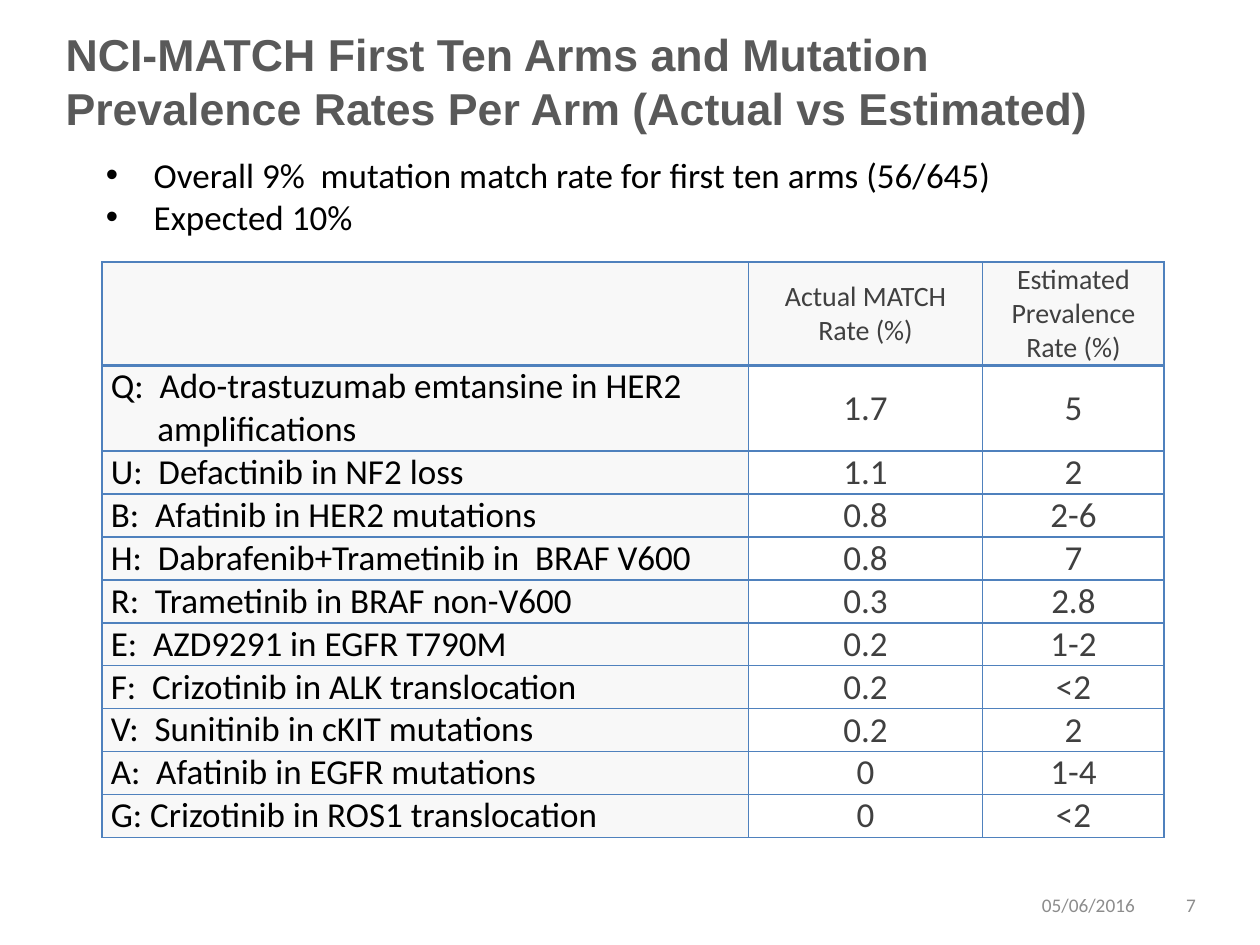
from pptx import Presentation, util as u
from pptx.dml.color import RGBColor
from pptx.enum import text as t
from pptx.oxml import parse_xml
from pptx.oxml.ns import nsdecls

# Content
TITLE = "NCI-MATCH First Ten Arms and Mutation Prevalence Rates Per Arm (Actual vs Estimated)"
POINTS = ["Overall 9%  mutation match rate for first ten arms (56/645)", "Expected 10%"]
HEAD = ("", "Actual MATCH Rate (%)", "Estimated Prevalence Rate (%)")
ARMS = [
    ("Q:  Ado-trastuzumab emtansine in HER2 amplifications", "1.7", "5"),
    ("U:  Defactinib in NF2 loss", "1.1", "2"),
    ("B:  Afatinib in HER2 mutations", "0.8", "2-6"),
    ("H:  Dabrafenib+Trametinib in  BRAF V600", "0.8", "7"),
    ("R:  Trametinib in BRAF non-V600", "0.3", "2.8"),
    ("E:  AZD9291 in EGFR T790M", "0.2", "1-2"),
    ("F:  Crizotinib in ALK translocation", "0.2", "<2"),
    ("V:  Sunitinib in cKIT mutations", "0.2", "2"),
    ("A:  Afatinib in EGFR mutations", "0", "1-4"),
    ("G: Crizotinib in ROS1 translocation", "0", "<2"),
]
FOOT = [("05/06/2016", 8.17, 1.1, "l"), ("7", 9.19, 0.4, "r")]

# Look
BLACK, DARK, GRAY, PALE, BLUE = "000000", "404040", "8C8C8C", "F8F8F8", "4F81BD"
ALIGN = {"l": t.PP_ALIGN.LEFT, "c": t.PP_ALIGN.CENTER, "r": t.PP_ALIGN.RIGHT}
MID = t.MSO_ANCHOR.MIDDLE
COLS = (5.13, 1.86, 1.44)
LINE = 0.34
ROWS = [0.82, 2 * LINE] + [LINE] * (len(ARMS) - 1)


def color(hue):
    return RGBColor.from_string(hue)


def place(shape, *box):
    shape.left, shape.top, shape.width, shape.height = map(u.Inches, box)


def write(frame, *lines, size=20, hue=BLACK, font="Calibri", bold=False,
          align="l", hang=0, after=0):
    """Fill a text frame, one paragraph for each line."""
    frame.word_wrap = True
    for i, line in enumerate(lines):
        para = frame.paragraphs[0] if i == 0 else frame.add_paragraph()
        if hang:
            props = para._p.get_or_add_pPr()
            props.set("marL", str(u.Inches(hang)))
            props.set("indent", str(-u.Inches(hang)))
        para.alignment = ALIGN[align]
        para.space_before = u.Pt(0)
        para.space_after = u.Pt(after if i == len(lines) - 1 else 0)
        run = para.add_run()
        run.text = line
        run.font.size, run.font.name, run.font.bold = u.Pt(size), font, bold
        run.font.color.rgb = color(hue)


def border(cell, **widths):
    """Draw cell sides L, R, T, B at the given widths in points."""
    for side, width in widths.items():
        cell._tc.get_or_add_tcPr().append(parse_xml(
            f'<a:ln{side} {nsdecls("a")} w="{u.Pt(width)}"><a:solidFill>'
            f'<a:srgbClr val="{BLUE}"/></a:solidFill></a:ln{side}>'))


deck = Presentation()
deck.slide_width, deck.slide_height = u.Inches(10), u.Inches(7.5)
slide = deck.slides.add_slide(deck.slide_layouts[1])

# Title and bullets
title, body = slide.placeholders
place(title, 0.42, 0.33, 9, 0.62)
title.text_frame.auto_size = t.MSO_AUTO_SIZE.NONE
title.text_frame.vertical_anchor = MID
write(title.text_frame, TITLE, size=25.5, hue="595959", font="Arial", bold=True)
place(body, 0.74, 1.17, 8.81, 0.77)
body.text_frame.auto_size = t.MSO_AUTO_SIZE.NONE
write(body.text_frame, *POINTS, hang=0.38, after=6)

# Table of arms
box = map(u.Inches, (0.81, 2.08, sum(COLS), sum(ROWS)))
grid = slide.shapes.add_table(len(ROWS), len(COLS), *box).table
grid.first_row = grid.horz_banding = False
for col, width in zip(grid.columns, COLS):
    col.width = u.Inches(width)
for r, texts in enumerate([HEAD] + ARMS):
    grid.rows[r].height = u.Inches(ROWS[r])
    for c, words in enumerate(texts):
        cell = grid.cell(r, c)
        cell.margin_left = cell.margin_right = u.Inches(0.07)
        cell.margin_top = cell.margin_bottom = 0
        border(cell, L=1, R=1, T=2 if r == 1 else 1, B=2 if r == 0 else 1)
        if r == 0 or c == 0:
            cell.fill.solid()
            cell.fill.fore_color.rgb = color(PALE)
        else:
            cell.fill.background()
        if c:
            cell.vertical_anchor = MID
        if words:
            write(cell.text_frame, words, size=20 if r else 16,
                  hue=DARK if c else BLACK, align="c" if c else "l",
                  hang=0.37 if (r, c) == (1, 0) else 0)

# Date and page number
for words, left, width, align in FOOT:
    note = slide.shapes.add_textbox(0, 0, 0, 0)
    place(note, left, 6.98, width, 0.4)
    note.text_frame.vertical_anchor = MID
    write(note.text_frame, words, size=11, hue=GRAY, align=align)

deck.save("out.pptx")
